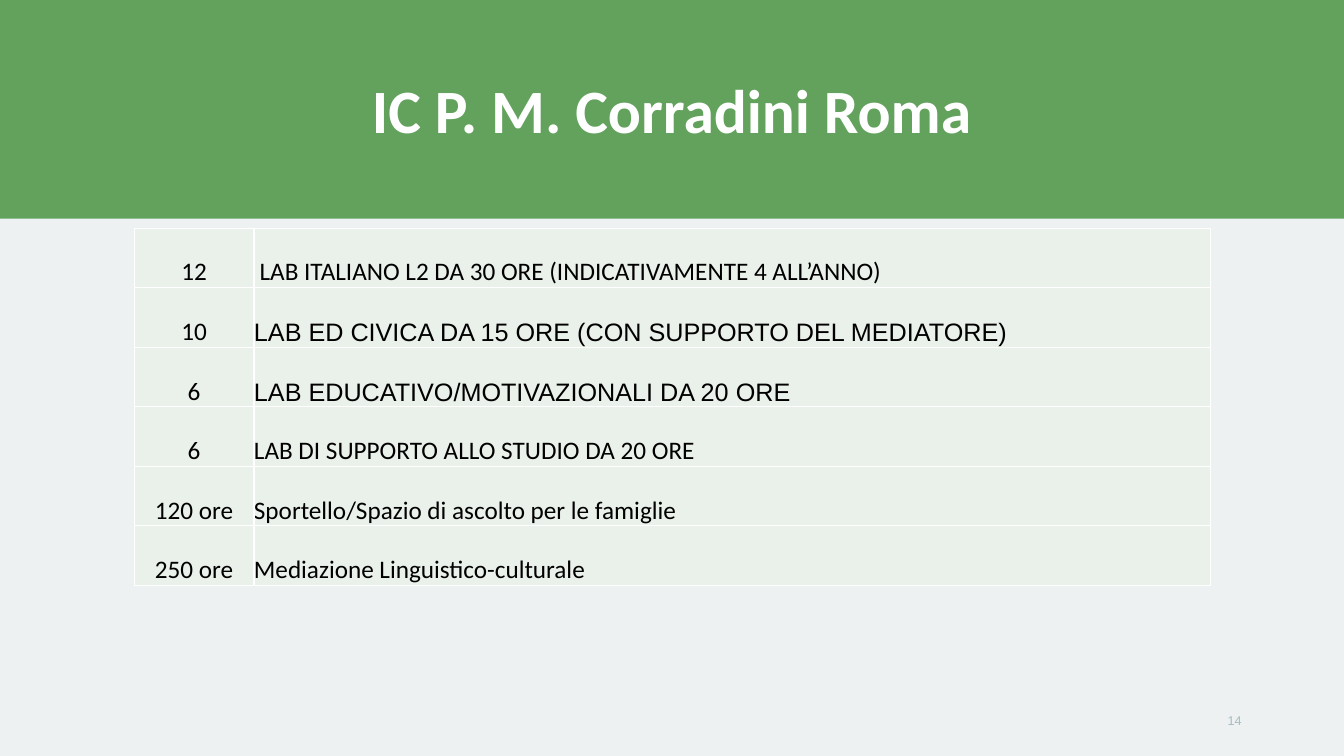
from lxml.etree import SubElement
from pptx import Presentation
from pptx.dml.color import RGBColor
from pptx.enum.shapes import MSO_SHAPE
from pptx.enum.text import MSO_ANCHOR, PP_ALIGN
from pptx.oxml.ns import qn
from pptx.util import Cm, Pt

# Content
TITLE = "IC P. M. Corradini Roma"
PAGE_NUMBER = "14"
ACTIVITIES = [  # amount, description, font of the description
    ("12", " LAB ITALIANO L2 DA 30 ORE (INDICATIVAMENTE 4 ALL’ANNO)", "Calibri"),
    ("10", "LAB ED CIVICA DA 15 ORE (CON SUPPORTO DEL MEDIATORE)", "Arial"),
    ("6", "LAB EDUCATIVO/MOTIVAZIONALI DA 20 ORE", "Arial"),
    ("6", "LAB DI SUPPORTO ALLO STUDIO DA 20 ORE", "Calibri"),
    ("120 ore", "Sportello/Spazio di ascolto per le famiglie", "Calibri"),
    ("250 ore", "Mediazione Linguistico-culturale", "Calibri"),
]

# Colours
BACKGROUND = RGBColor(0xED, 0xF1, 0xF2)
GREEN = RGBColor(0x62, 0xA2, 0x5D)
PALE_GREEN = RGBColor(0xEA, 0xF0, 0xEA)
GREY = RGBColor(0xA7, 0xBB, 0xC0)
WHITE = RGBColor(0xFF, 0xFF, 0xFF)
BLACK = RGBColor(0x00, 0x00, 0x00)

# Layout
SLIDE_WIDTH, SLIDE_HEIGHT = Cm(33.87), Cm(19.05)
BAND_HEIGHT = Cm(5.51)
TABLE_LEFT, TABLE_TOP = Cm(3.38), Cm(5.75)
COLUMN_WIDTHS = [Cm(3.02), Cm(24.1)]
ROW_HEIGHT = Cm(1.5)


def write(paragraph, text, font, size, color, alignment, bold=False):
    paragraph.alignment = alignment
    run = paragraph.add_run()
    run.text = text
    run.font.name = font
    run.font.size = Pt(size)
    run.font.bold = bold
    run.font.color.rgb = color


def add_text(slide, left, top, width, height):
    frame = slide.shapes.add_textbox(left, top, width, height).text_frame
    frame.word_wrap = True
    frame.vertical_anchor = MSO_ANCHOR.MIDDLE
    return frame.paragraphs[0]


def style_cell(cell):
    cell.margin_left = cell.margin_right = cell.margin_top = cell.margin_bottom = 0
    cell.vertical_anchor = MSO_ANCHOR.BOTTOM
    properties = cell._tc.get_or_add_tcPr()
    for side in ("lnL", "lnR", "lnT", "lnB"):
        border = SubElement(properties, qn(f"a:{side}"), w=str(Pt(1)))
        line_fill = SubElement(border, qn("a:solidFill"))
        SubElement(line_fill, qn("a:srgbClr"), val=str(WHITE))
    cell.fill.solid()
    cell.fill.fore_color.rgb = PALE_GREEN


def main():
    presentation = Presentation()
    presentation.slide_width, presentation.slide_height = SLIDE_WIDTH, SLIDE_HEIGHT
    slide = presentation.slides.add_slide(presentation.slide_layouts[6])
    slide.background.fill.solid()
    slide.background.fill.fore_color.rgb = BACKGROUND

    # Title band
    band = slide.shapes.add_shape(MSO_SHAPE.RECTANGLE, 0, 0, SLIDE_WIDTH, BAND_HEIGHT)
    band.shadow.inherit = False
    band.fill.solid()
    band.fill.fore_color.rgb = GREEN
    band.line.fill.background()
    title = add_text(slide, Cm(2.33), Cm(1.01), Cm(29.21), Cm(3.68))
    title.line_spacing = 0.9
    write(title, TITLE, "Calibri", 44, WHITE, PP_ALIGN.CENTER, bold=True)

    # Page number
    number = add_text(slide, Cm(23.92), Cm(17.66), Cm(7.62), Cm(1.01))
    write(number, PAGE_NUMBER, "Arial", 9, GREY, PP_ALIGN.RIGHT)

    # Activities table
    table = slide.shapes.add_table(
        len(ACTIVITIES), len(COLUMN_WIDTHS), TABLE_LEFT, TABLE_TOP,
        sum(COLUMN_WIDTHS), ROW_HEIGHT * len(ACTIVITIES)).table
    table.first_row = table.horz_banding = False
    for column, width in zip(table.columns, COLUMN_WIDTHS):
        column.width = width
    for row, (amount, description, font) in zip(table.rows, ACTIVITIES):
        row.height = ROW_HEIGHT
        amount_cell, description_cell = row.cells
        style_cell(amount_cell)
        style_cell(description_cell)
        write(amount_cell.text_frame.paragraphs[0], amount,
              "Calibri", 18, BLACK, PP_ALIGN.CENTER)
        write(description_cell.text_frame.paragraphs[0], description,
              font, 18, BLACK, PP_ALIGN.LEFT)

    presentation.save("out.pptx")


if __name__ == "__main__":
    main()
